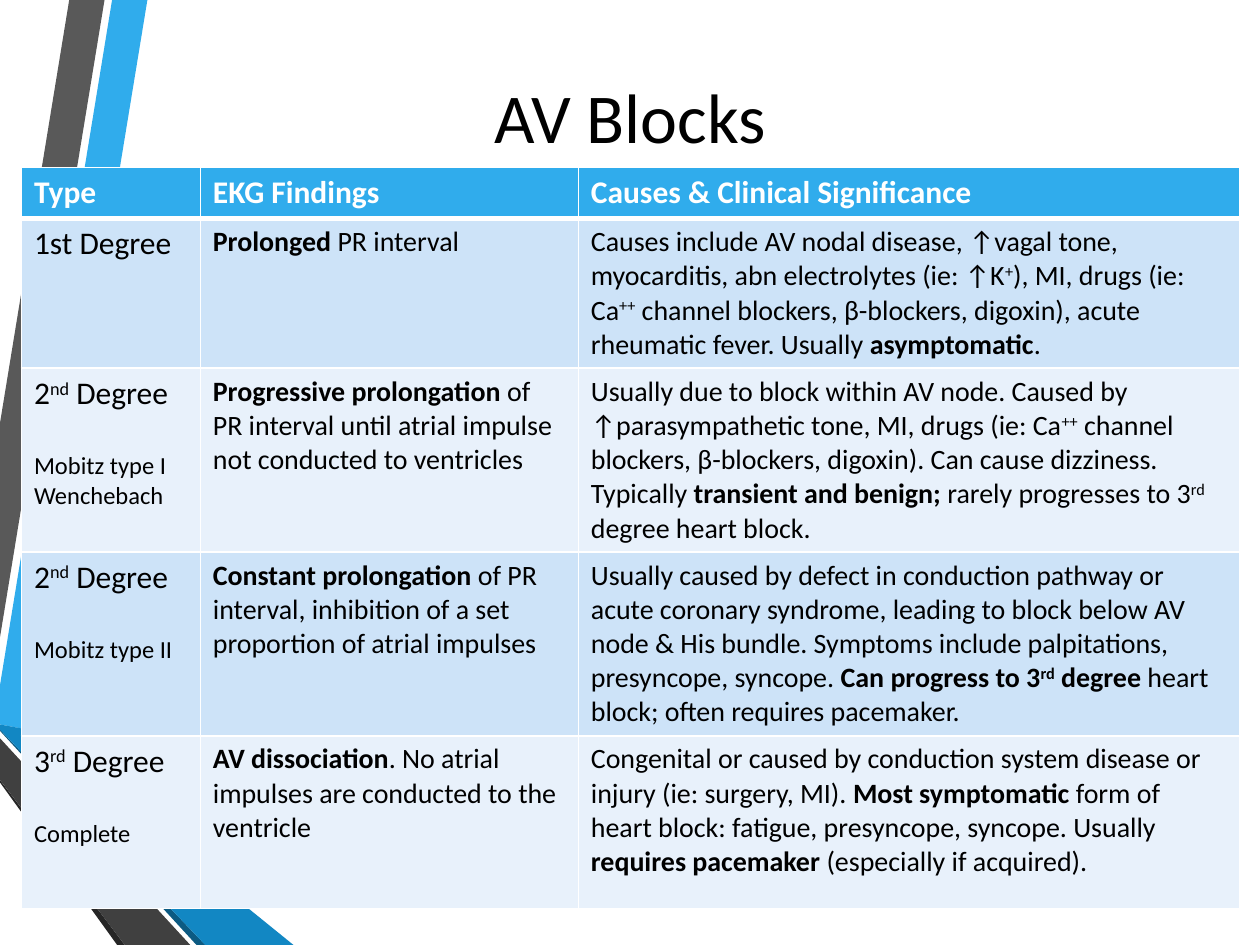
import dataclasses
import typing

import lxml.etree
import pptx
import pptx.dml.color
import pptx.enum.text
import pptx.oxml.ns
import pptx.util

Inches = pptx.util.Inches
Pt = pptx.util.Pt

HUES = {
    "sky": "30ACEC", "slate": "595959", "coal": "262626", "navy": "0C5A82",
    "blue": "1287C3", "gray": "404040", "pale": "CDE3F8", "mist": "E8F1FB",
    "white": "FFFFFF", "black": "000000",
}
FACE = "Calibri"


@dataclasses.dataclass
class Band:
    hue: str
    points: list[tuple[float, float]]


@dataclasses.dataclass
class Block:
    degree: str
    kind: str
    finding: str
    cause: str


BANDS = [
    Band("sky", [(0, 5.44), (0, 5.75), (0.22, 5.79), (1.17, 0), (0.89, 0)]),
    Band("slate", [(0.83, 0), (0.55, 0), (0, 3.36), (0, 5.06)]),
    Band("coal", [(0, 6.19), (0, 6.21), (0.93, 7.5), (0.99, 7.5)]),
    Band("navy", [(0, 5.79), (0, 5.8), (1.56, 7.5), (1.63, 7.5)]),
    Band("blue", [(0, 5.79), (1.63, 7.5), (2.33, 7.5), (0.22, 5.79), (0, 5.75)]),
    Band("gray", [(0, 6.19), (0.99, 7.5), (1.51, 7.5), (0, 5.86)]),
]
HEADS = ["Type", "EKG Findings", "Causes & Clinical Significance"]
# In the texts below, * toggles bold and ^ toggles superscript.
BLOCKS = [
    Block("1st Degree", "", "*Prolonged* PR interval",
          "Causes include AV nodal disease, ↑vagal tone, myocarditis, abn electrolytes "
          "(ie: ↑K^+^), MI, drugs (ie: Ca^++^ channel blockers, β-blockers, digoxin), "
          "acute rheumatic fever. Usually *asymptomatic*."),
    Block("2^nd^ Degree", "Mobitz type I Wenchebach",
          "*Progressive prolongation* of PR interval until atrial impulse "
          "not conducted to ventricles",
          "Usually due to block within AV node. Caused by ↑parasympathetic tone, MI, "
          "drugs (ie: Ca^++^ channel blockers, β-blockers, digoxin). Can cause dizziness. "
          "Typically *transient and benign; *rarely progresses to 3^rd^ degree heart block."),
    Block("2^nd^ Degree", "Mobitz type II",
          "*Constant prolongation *of PR interval, inhibition of a set "
          "proportion of atrial impulses",
          "Usually caused by defect in conduction pathway or acute coronary syndrome, "
          "leading to block below AV node & His bundle. Symptoms include palpitations, "
          "presyncope, syncope. *Can progress to 3^rd^ degree* heart block; "
          "often requires pacemaker."),
    Block("3^rd^ Degree", "Complete",
          "*AV dissociation*. No atrial impulses are conducted to the ventricle",
          "Congenital or caused by conduction system disease or injury (ie: surgery, MI). "
          "*Most symptomatic *form of heart block: fatigue, presyncope, syncope. Usually "
          "*requires pacemaker *(especially if acquired)."),
]
WIDTHS = [1.42, 3, 5.25]
HEIGHTS = [0.33, 1.15, 1.41, 1.41, 1.37]


def tint(name: str) -> pptx.dml.color.RGBColor:
    return pptx.dml.color.RGBColor.from_string(HUES[name])


def style(font: typing.Any, size: float, hue: str = "black", bold: bool = False) -> None:
    for key, value in {"name": FACE, "size": Pt(size), "bold": bold}.items():
        setattr(font, key, value)
    font.color.rgb = tint(hue)


def write(para: typing.Any, text: str, size: float, hue: str = "black") -> None:
    for i, part in enumerate(text.split("*")):
        for j, piece in enumerate(part.split("^")):
            if piece:
                run = para.add_run()
                run.text = piece
                style(run.font, size, hue, i % 2 == 1)
                if j % 2:
                    run._r.get_or_add_rPr().set("baseline", "30000")


def edge(cell: typing.Any, top: float, base: float) -> None:
    props = cell._tc.get_or_add_tcPr()
    qn = pptx.oxml.ns.qn
    for side, width in {"L": 1, "R": 1, "T": top, "B": base}.items():
        line = lxml.etree.SubElement(props, qn(f"a:ln{side}"), w=str(Pt(width)))
        fill = lxml.etree.SubElement(line, qn("a:solidFill"))
        lxml.etree.SubElement(fill, qn("a:srgbClr"), val=HUES["white"])


def paint(cell: typing.Any, hue: str, top: float = 1, base: float = 1) -> None:
    edge(cell, top, base)
    cell.fill.solid()
    cell.fill.fore_color.rgb = tint(hue)


def draw_band(slide: typing.Any, band: Band) -> None:
    spots = [(Inches(x), Inches(y)) for x, y in band.points]
    pen = slide.shapes.build_freeform(*spots[0])
    pen.add_line_segments(spots[1:], close=True)
    shape = pen.convert_to_shape()
    shape.shadow.inherit = False
    shape.fill.solid()
    shape.fill.fore_color.rgb = tint(band.hue)
    shape.line.fill.background()


def draw_title(slide: typing.Any, text: str) -> None:
    title = slide.shapes.title
    place = {"left": 0.5, "top": 0.17, "width": 9, "height": 1.5}
    for key, value in place.items():
        setattr(title, key, Inches(value))
    title.text_frame.vertical_anchor = pptx.enum.text.MSO_ANCHOR.MIDDLE
    para = title.text_frame.paragraphs[0]
    para.alignment = pptx.enum.text.PP_ALIGN.CENTER
    write(para, text, 40)
    slide.shapes._spTree.append(title._element)


def draw_table(slide: typing.Any) -> None:
    table = slide.shapes.add_table(
        len(HEIGHTS), len(WIDTHS), Inches(0.17), Inches(1.33),
        Inches(sum(WIDTHS)), Inches(sum(HEIGHTS))).table
    for col, width in zip(table.columns, WIDTHS):
        col.width = Inches(width)
    for row, height in zip(table.rows, HEIGHTS):
        row.height = Inches(height)
    for cell, head in zip(table.rows[0].cells, HEADS):
        paint(cell, "sky", base=3)
        write(cell.text_frame.paragraphs[0], f"*{head}*", 18, "white")
    for i, block in enumerate(BLOCKS, 1):
        cells = list(table.rows[i].cells)
        texts = [(block.degree, 18), (block.finding, 16), (block.cause, 16)]
        for cell, (text, size) in zip(cells, texts):
            paint(cell, "pale" if i % 2 else "mist", top=3 if i == 1 else 1)
            write(cell.text_frame.paragraphs[0], text, size)
        if block.kind:
            para = cells[0].text_frame.add_paragraph()
            para.space_before = Pt(22)
            write(para, block.kind, 14)


def main() -> None:
    deck = pptx.Presentation()
    deck.slide_width, deck.slide_height = Inches(10), Inches(7.5)
    slide = deck.slides.add_slide(deck.slide_layouts[5])
    for band in BANDS:
        draw_band(slide, band)
    draw_title(slide, "AV Blocks")
    draw_table(slide)
    deck.save("out.pptx")


if __name__ == "__main__":
    main()
